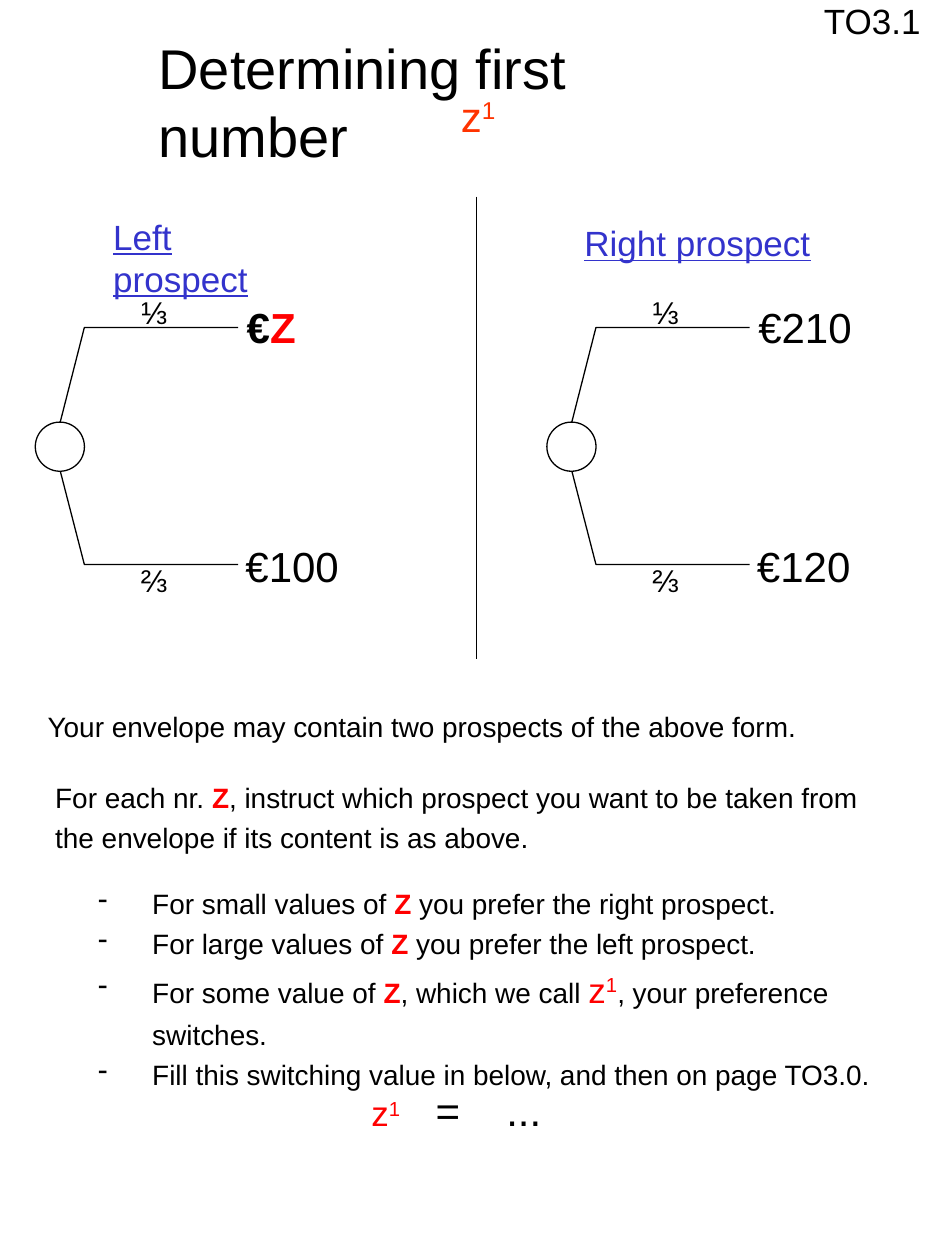
from lxml import etree
from pptx import Presentation
from pptx.dml.color import RGBColor
from pptx.enum import shapes
from pptx.oxml.ns import qn
from pptx.util import Inches, Pt

BLACK = RGBColor(0, 0, 0)
WHITE = RGBColor(255, 255, 255)
RED = RGBColor(255, 0, 0)
ORANGE = RGBColor(255, 51, 0)
BLUE = RGBColor(51, 51, 204)

BIG_Z = ("Z", {"bold": True, "color": RED})
SMALL_Z = [("z", {"size": 20, "color": RED}),
           ("1", {"size": 20, "color": RED, "raised": True})]


def add_run(para, words, size=None, color=None, bold=None, raised=False):
    run = para.add_run()
    run.text = words
    if size:
        run.font.size = Pt(size)
    if color is not None:
        run.font.color.rgb = color
    if bold:
        run.font.bold = True
    if raised:
        run._r.get_or_add_rPr().set("baseline", "30000")


def fill_para(para, parts, size, color=BLACK, spacing=None, underline=None):
    font = para.font
    font.name = "Arial"
    font.size = Pt(size)
    font.color.rgb = color
    font.underline = underline
    if spacing:
        para.line_spacing = spacing
    for part in [parts] if isinstance(parts, str) else parts:
        words, style = (part, {}) if isinstance(part, str) else part
        add_run(para, words, **style)


def add_frame(slide, left, top, width, height, wrap=False):
    box = slide.shapes.add_textbox(
        Inches(left), Inches(top), Inches(width), Inches(height))
    box.text_frame.word_wrap = wrap
    return box.text_frame


def add_text(slide, place, parts, size, wrap=False, **style):
    para = add_frame(slide, *place, wrap=wrap).paragraphs[0]
    fill_para(para, parts, size, **style)
    return para


def add_list(slide, place, items, indent):
    frame = add_frame(slide, *place, wrap=True)
    for index, parts in enumerate(items):
        para = frame.add_paragraph() if index else frame.paragraphs[0]
        fill_para(para, parts, 16, spacing=1.2)
        props = para._p.get_or_add_pPr()
        props.set("marL", str(Inches(indent)))
        props.set("indent", str(-Inches(indent)))
        mark = etree.Element(qn("a:buChar"), char="-")
        props.find(qn("a:defRPr")).addprevious(mark)


def set_tabs(para, stops):
    tabs = etree.Element(qn("a:tabLst"))
    for stop in stops:
        etree.SubElement(tabs, qn("a:tab"), pos=str(Inches(stop)), algn="l")
    para._p.get_or_add_pPr().find(qn("a:defRPr")).addprevious(tabs)


def set_line(shape):
    shape.line.color.rgb = BLACK
    shape.line.width = Pt(0.75)


def add_branch(slide, left, start, end):
    build = slide.shapes.build_freeform(Inches(left), Inches(start))
    build.add_line_segments(
        [(Inches(left + 0.24), Inches(end)),
         (Inches(left + 1.46), Inches(end))], close=False)
    shape = build.convert_to_shape()
    shape.shadow.inherit = False
    shape.fill.background()
    set_line(shape)


def add_fork(slide, left, upper, lower):
    add_branch(slide, left + 0.15, 3.54, 2.6)
    add_branch(slide, left + 0.15, 3.55, 4.48)
    node = slide.shapes.add_shape(
        shapes.MSO_SHAPE.OVAL, Inches(left), Inches(3.35),
        Inches(0.39), Inches(0.39))
    node.shadow.inherit = False
    node.fill.solid()
    node.fill.fore_color.rgb = WHITE
    set_line(node)
    add_text(slide, (left + 0.74, 2.28, 0.48, 0.4), "⅓", 18)
    add_text(slide, (left + 0.74, 4.4, 0.48, 0.4), "⅔", 18)
    width = 0.94 if isinstance(upper, str) else 0.59
    add_text(slide, (left + 1.58, 2.34, width, 0.5), upper, 24)
    add_text(slide, (left + 1.57, 4.24, 0.94, 0.5), lower, 24)


def add_divide(slide):
    line = slide.shapes.add_connector(
        shapes.MSO_CONNECTOR.STRAIGHT, Inches(3.78), Inches(1.56),
        Inches(3.78), Inches(5.23))
    set_line(line)
    etree.SubElement(line._element.spPr, qn("a:effectLst"))


def main():
    deck = Presentation()
    deck.slide_width = Inches(7.5)
    deck.slide_height = Inches(10)
    slide = deck.slides.add_slide(deck.slide_layouts[6])

    add_text(slide, (1.16, 0.22, 5.06, 0.63),
             "Determining first number", 32, wrap=True)
    add_text(slide, (3.56, 0.67, 0.49, 0.5),
             ["z", ("1", {"raised": True})], 24, color=ORANGE)
    add_text(slide, (6.44, -0.05, 0.97, 0.43), "TO3.1", 20)

    add_text(slide, (0.8, 1.66, 1.8, 0.43), "Left prospect", 20,
             wrap=True, color=BLUE, underline=True)
    add_text(slide, (4.54, 1.71, 2.2, 0.43), "Right prospect", 20,
             wrap=True, color=BLUE, underline=True)
    add_fork(slide, 0.28, [("€", {"bold": True}), BIG_Z], "€100")
    add_fork(slide, 4.34, "€210", "€120")
    add_divide(slide)

    add_text(slide, (0.28, 5.53, 6.18, 0.42),
             "Your envelope may contain two prospects of the above form.",
             16, spacing=1.2)
    add_text(slide, (0.34, 6.09, 6.84, 0.74),
             ["For each nr. ", BIG_Z,
              ", instruct which prospect you want to be taken from "
              "the envelope if its content is as above."],
             16, wrap=True, spacing=1.2)
    add_list(slide, (0.68, 6.93, 6.45, 1.78), [
        ["For small values of ", BIG_Z, " you prefer the right prospect."],
        ["For large values of ", BIG_Z, " you prefer the left prospect."],
        ["For some value of ", BIG_Z, ", which we call ", *SMALL_Z,
         ", your preference switches."],
        "Fill this switching value in below, and then on page TO3.0.",
    ], 0.43)
    answer = add_text(slide, (2.85, 8.56, 1.56, 0.5),
                      [*SMALL_Z, "\t=\t..."], 24)
    set_tabs(answer, [0.51, 1.07])

    deck.save("out.pptx")


if __name__ == "__main__":
    main()
